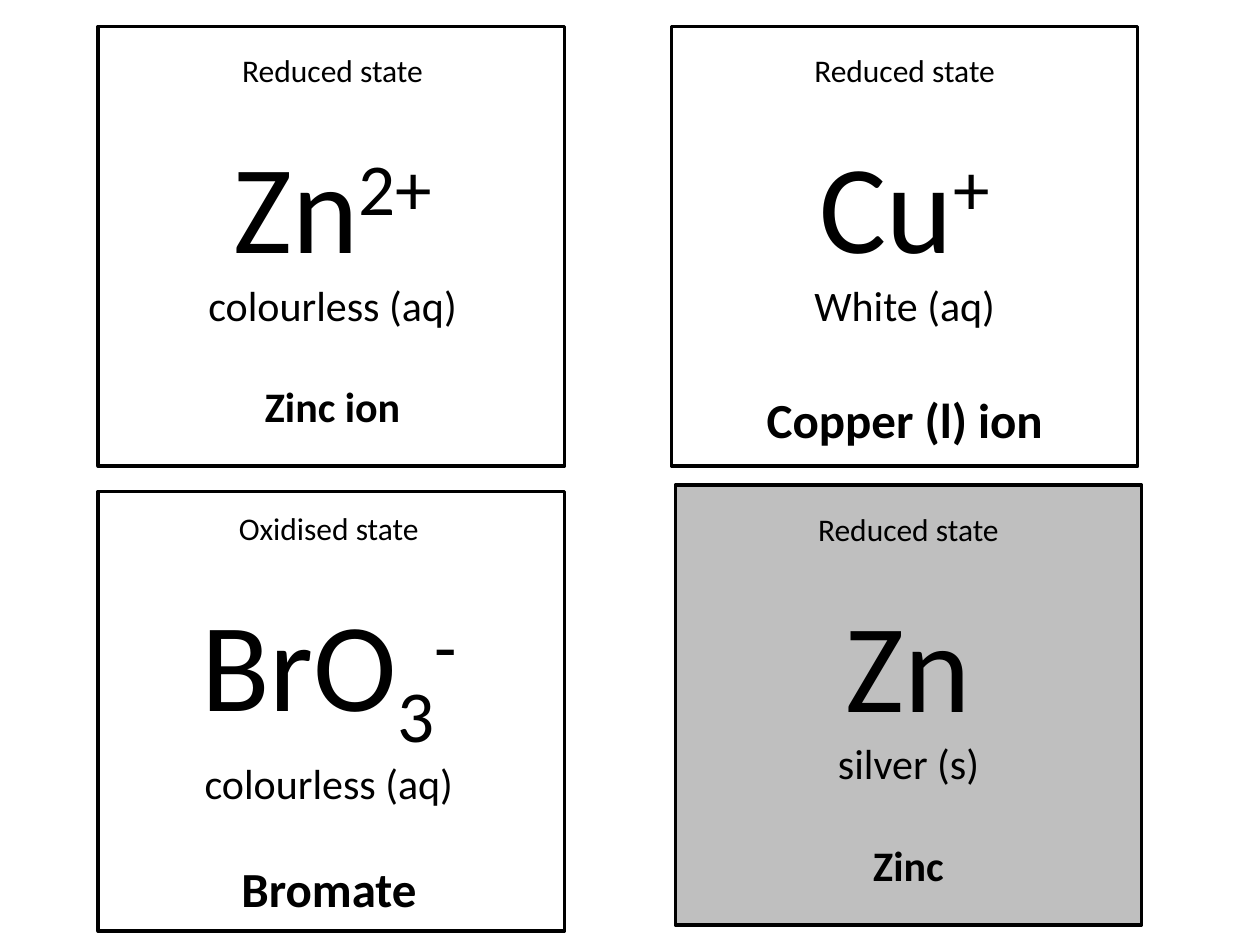
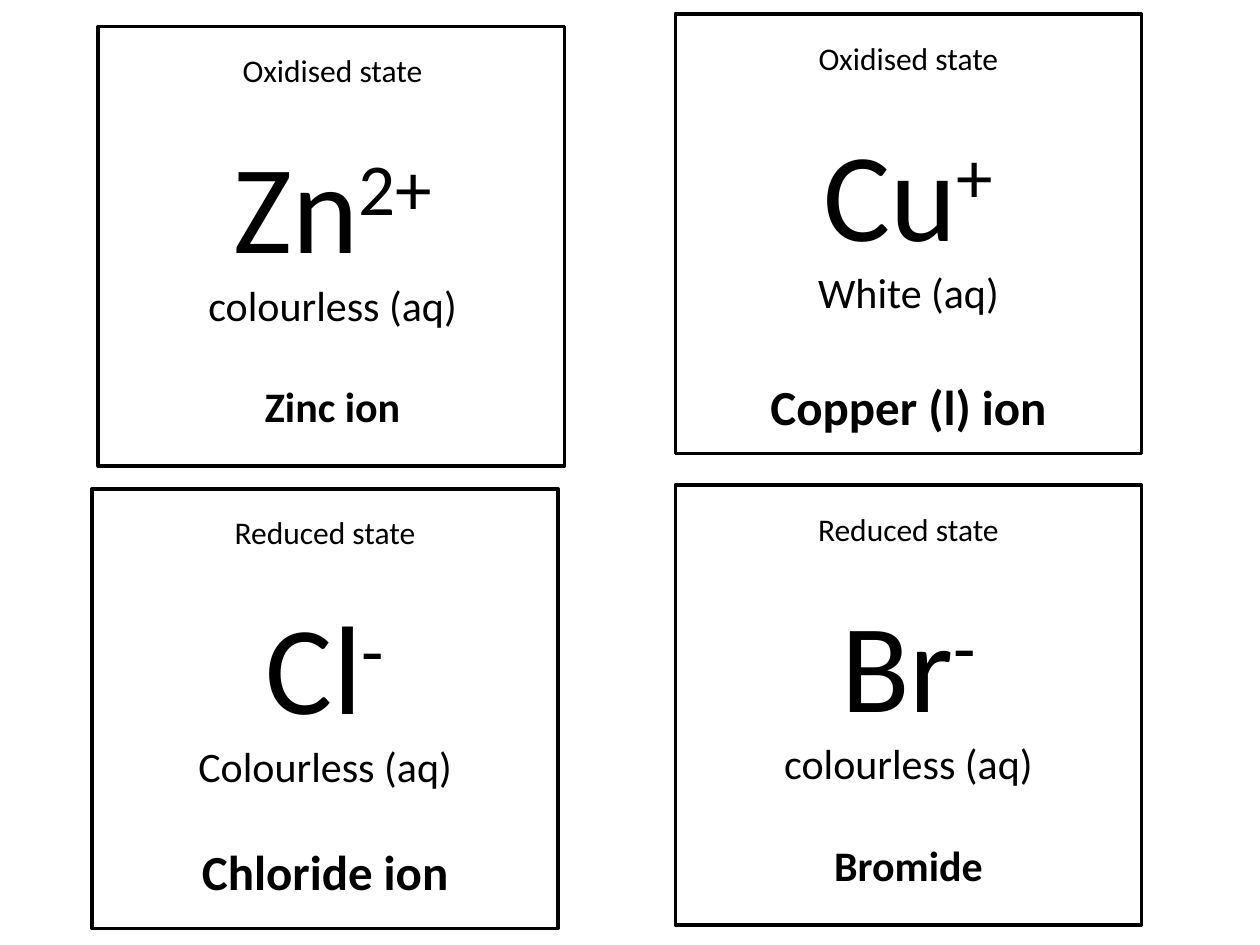
from dataclasses import dataclass

from pptx import Presentation
from pptx.dml.color import RGBColor
from pptx.enum.shapes import MSO_SHAPE as Preset
from pptx.enum.text import MSO_AUTO_SIZE as AutoSize, PP_ALIGN as Align
from pptx.util import Inches, Pt

PX = Inches(1) // 100  # 100 px to the inch
COLOURS = {"ink": "000000", "paper": "FFFFFF", "silver": "BFBFBF"}
FONT = "Calibri"
LINE_HEIGHT = 1.22  # of the text size
CARD_WIDTH, CARD_HEIGHT = 370, 349
TEXT_WIDTH = 402
SUPER, SUB = 30, -25  # baseline shift in percent


@dataclass(frozen=True)
class NameStyle:
    size: int
    gap: int  # size of the empty line above the name
    text_height: int


SMALL = NameStyle(24, 24, 313)
LARGE = NameStyle(28, 24, 320)
LARGE_SPACED = NameStyle(28, 28, 333)


@dataclass
class Card:
    left: int
    top: int
    state: str
    symbol: list  # (text, baseline shift) pairs
    appearance: str
    name: str
    name_style: NameStyle = SMALL
    fill: str = None
    text_offset: tuple = (-16, 15)


class CardDeck:
    """Holds the presentation, the current slide and the card style."""

    def __init__(self):
        self.presentation = Presentation()
        self.presentation.slide_width = 1000 * PX
        self.presentation.slide_height = 750 * PX
        self.slide = None

    def new_slide(self):
        layout = self.presentation.slide_layouts[6]
        self.slide = self.presentation.slides.add_slide(layout)

    def frame(self, left, top, fill):
        shape = self.slide.shapes.add_shape(
            Preset.RECTANGLE, left * PX, top * PX, CARD_WIDTH * PX, CARD_HEIGHT * PX)
        shape.shadow.inherit = False
        if fill:
            shape.fill.solid()
            shape.fill.fore_color.rgb = RGBColor.from_string(COLOURS[fill])
        else:
            shape.fill.background()
        shape.line.color.rgb = RGBColor.from_string(COLOURS["ink"])
        shape.line.width = Pt(2)

    def text(self, left, top, height, lines):
        """Each line is (runs, size, bold, size of the empty line above)."""
        box = self.slide.shapes.add_textbox(
            left * PX, top * PX, TEXT_WIDTH * PX, height * PX)
        frame = box.text_frame
        frame.word_wrap = True
        frame.auto_size = AutoSize.SHAPE_TO_FIT_TEXT
        for index, (runs, size, bold, gap) in enumerate(lines):
            paragraph = frame.add_paragraph() if index else frame.paragraphs[0]
            paragraph.alignment = Align.CENTER
            if gap:
                paragraph.space_before = Pt(round(gap * LINE_HEIGHT, 1))
            for content, shift in runs:
                self.run(paragraph, content, size, bold, shift)

    def run(self, paragraph, content, size, bold, shift):
        run = paragraph.add_run()
        run.text = content
        run.font.name = FONT
        run.font.size = Pt(size)
        run.font.bold = bold
        run.font.color.rgb = RGBColor.from_string(COLOURS["ink"])
        if shift:
            run.font._element.set("baseline", str(shift * 1000))

    def card(self, card):
        self.frame(card.left, card.top, card.fill)
        style = card.name_style
        across, down = card.text_offset
        self.text(card.left + across, card.top + down, style.text_height, [
            ([(card.state, 0)], 18, False, 0),
            (card.symbol, 72, False, 18),
            ([(card.appearance, 0)], 24, False, 0),
            ([(card.name, 0)], style.size, True, style.gap),
        ])


def zinc_ion(state):
    return Card(78, 21, state, [("Zn", 0), ("2+", SUPER)],
                "colourless (aq)", "Zinc ion", fill="paper", text_offset=(-15, 15))


def copper_ion(left, top, state):
    return Card(left, top, state, [("Cu", 0), ("+", SUPER)],
                "White (aq)", "Copper (l) ion", LARGE_SPACED)


REDUCED, OXIDISED = "Reduced state", "Oxidised state"

SLIDES = [
    # Zinc, copper and bromate
    [
        Card(78, 390, OXIDISED, [("BrO", 0), ("3", SUB), ("-", SUPER)],
             "colourless (aq)", "Bromate", LARGE, text_offset=(-18, 9)),
        zinc_ion(REDUCED),
        copper_ion(533, 21, REDUCED),
        Card(536, 385, REDUCED, [("Zn", 0)], "silver (s)", "Zinc", fill="silver"),
    ],
    # Zinc, copper and the halides
    [
        zinc_ion(OXIDISED),
        Card(536, 385, REDUCED, [("Br", 0), ("-", SUPER)],
             "colourless (aq)", "Bromide", fill="paper"),
        copper_ion(536, 11, OXIDISED),
        Card(73, 388, REDUCED, [("Cl", 0), ("-", SUPER)],
             "Colourless (aq)", "Chloride ion", LARGE, text_offset=(-16, 14)),
    ],
]


def main():
    deck = CardDeck()
    for cards in SLIDES:
        deck.new_slide()
        for card in cards:
            deck.card(card)
    deck.presentation.save("out.pptx")


if __name__ == "__main__":
    main()
